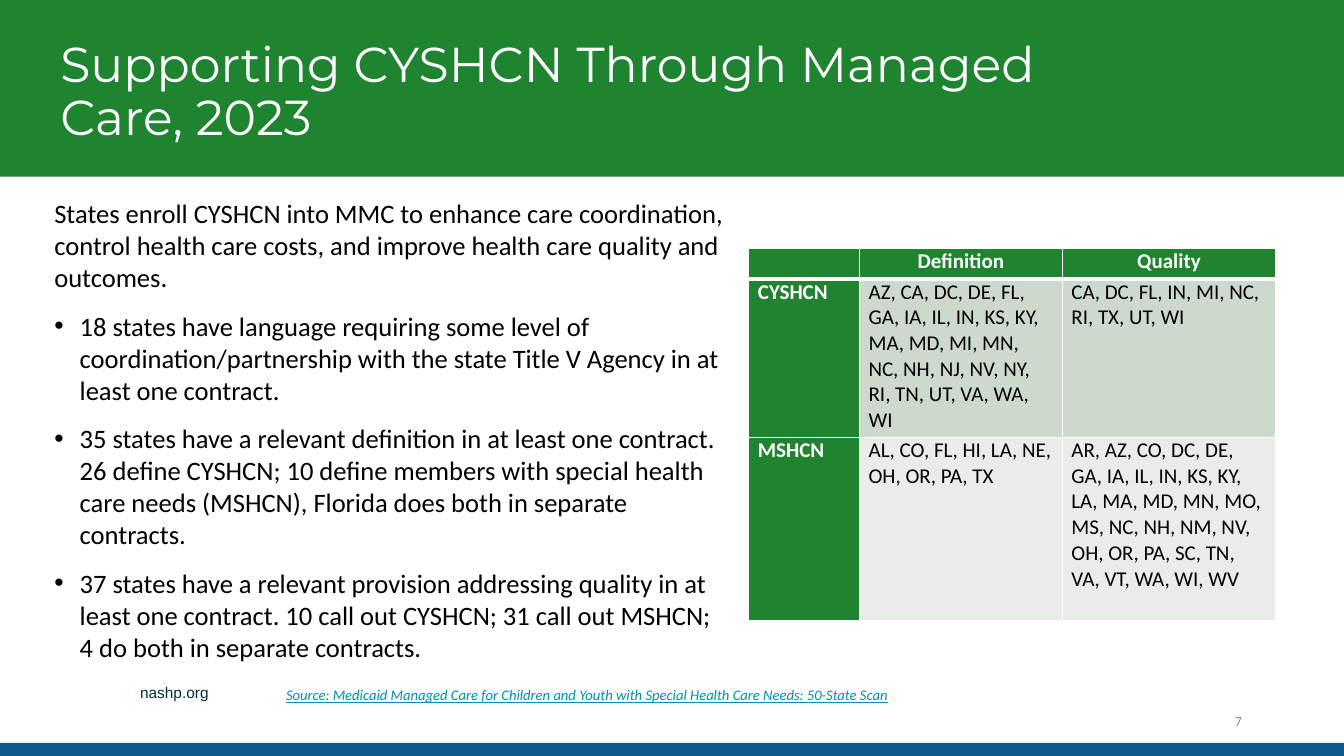
from lxml.etree import SubElement
from pptx import Presentation
from pptx.dml.color import RGBColor
from pptx.enum.shapes import MSO_SHAPE
from pptx.enum.text import MSO_ANCHOR, MSO_AUTO_SIZE, PP_ALIGN
from pptx.oxml.ns import qn
from pptx.util import Cm, Pt

COLORS = {
    "green": "1F842F", "head": "1F832F", "band1": "CDD9CD", "band2": "E8EDE8",
    "blue": "0A5A8C", "link": "008FB9", "navy": "002E3B", "gray": "8C8C8C",
    "black": "000000", "white": "FFFFFF",
}

# Content
TITLE = ["Supporting CYSHCN Through Managed", "Care, 2023"]
INTRO = ("States enroll CYSHCN into MMC to enhance care coordination, control "
         "health care costs, and improve health care quality and outcomes.")
BULLETS = [
    "18 states have language requiring some level of coordination/partnership "
    "with the state Title V Agency in at least one contract.",
    "35 states have a relevant definition in at least one contract. 26 define "
    "CYSHCN; 10 define members with special health care needs (MSHCN), Florida "
    "does both in separate contracts.",
    "37 states have a relevant provision addressing quality in at least one "
    "contract. 10 call out CYSHCN; 31 call out MSHCN; 4 do both in separate "
    "contracts.",
]
STATES = [
    ("", "Definition", "Quality"),
    ("CYSHCN",
     "AZ, CA, DC, DE, FL, GA, IA, IL, IN, KS, KY, MA, MD, MI, MN, NC, NH, NJ, "
     "NV, NY, RI, TN, UT, VA, WA, WI",
     "CA, DC, FL, IN, MI, NC, RI, TX, UT, WI"),
    ("MSHCN",
     "AL, CO, FL, HI, LA, NE, OH, OR, PA, TX",
     "AR, AZ, CO, DC, DE, GA, IA, IL, IN, KS, KY, LA, MA, MD, MN, MO, MS, NC, "
     "NH, NM, NV, OH, OR, PA, SC, TN, VA, VT, WA, WI, WV"),
]
SITE = "nashp.org"
SOURCE = ("Source: Medicaid Managed Care for Children and Youth with Special "
          "Health Care Needs: 50-State Scan")
PAGE = "7"

# Layout in centimetres
WIDTH, HEIGHT = 33.87, 19.05
BANDS = [("green", 0, 4.45), ("blue", 18.72, 0.33)]
COL_WIDTHS = [2.79, 5.11, 5.38]
ROW_HEIGHTS = [0.76, 3.99, 4.62]


def rgb(name):
    return RGBColor.from_string(COLORS[name])


def add_run(p, text, color, **font):
    r = p.add_run()
    r.text = text
    r.font.color.rgb = rgb(color)
    for key, value in {"name": "Calibri", **font}.items():
        setattr(r.font, key, value)


def add_box(s, left, top, width, height):
    tf = s.shapes.add_textbox(Cm(left), Cm(top), Cm(width), Cm(height)).text_frame
    tf.word_wrap = True
    return tf


def add_bullet(p):
    pPr = p._p.get_or_add_pPr()
    pPr.set("marL", str(Cm(0.64)))
    pPr.set("indent", str(-Cm(0.64)))
    clr = SubElement(pPr, qn("a:buClr"))
    SubElement(clr, qn("a:srgbClr"), val=COLORS["black"])
    SubElement(pPr, qn("a:buFont"), typeface="Arial")
    SubElement(pPr, qn("a:buChar"), char="•")


def set_borders(cell, widths):
    """Draw white borders, placed ahead of the cell's fill."""
    tcPr = cell._tc.get_or_add_tcPr()
    for i, (side, width) in enumerate(widths.items()):
        ln = SubElement(tcPr, qn(f"a:ln{side}"), w=str(Pt(width)))
        fill = SubElement(ln, qn("a:solidFill"))
        SubElement(fill, qn("a:srgbClr"), val=COLORS["white"])
        tcPr.insert(i, ln)


prs = Presentation()
prs.slide_width, prs.slide_height = Cm(WIDTH), Cm(HEIGHT)
s = prs.slides.add_slide(prs.slide_layouts[5])

# Top and bottom bands
for color, top, height in BANDS:
    sp = s.shapes.add_shape(MSO_SHAPE.RECTANGLE, 0, Cm(top), Cm(WIDTH), Cm(height))
    sp.shadow.inherit = False
    sp.fill.solid()
    sp.fill.fore_color.rgb = rgb(color)
    sp.line.fill.background()

# Title, brought in front of the green band
title = s.shapes.title
s.shapes._spTree.append(title._element)
title.left, title.top, title.width, title.height = Cm(1.52), Cm(0.56), Cm(30.84), Cm(3.25)
tf = title.text_frame
for key, value in {"word_wrap": True, "auto_size": MSO_AUTO_SIZE.NONE,
                   "vertical_anchor": MSO_ANCHOR.BOTTOM, "margin_left": 0}.items():
    setattr(tf, key, value)
p = tf.paragraphs[0]
p.alignment, p.line_spacing = PP_ALIGN.LEFT, 0.9
for i, line in enumerate(TITLE):
    if i:
        p.add_line_break()
    add_run(p, line, "white", name="Montserrat", size=Pt(35))

# Body text
tf = add_box(s, 1.12, 4.85, 17.5, 11.96)
for i, text in enumerate([INTRO] + BULLETS):
    p = tf.add_paragraph() if i else tf.paragraphs[0]
    if i:
        add_bullet(p)
        p.space_before = Pt(4)
    p.space_after = Pt(8)
    add_run(p, text, "black", size=Pt(19))

# Table of states
table = s.shapes.add_table(len(STATES), len(COL_WIDTHS), Cm(18.87), Cm(6.27),
                           Cm(sum(COL_WIDTHS)), Cm(sum(ROW_HEIGHTS))).table
for column, width in zip(table.columns, COL_WIDTHS):
    column.width = Cm(width)
for i, (row, height) in enumerate(zip(table.rows, ROW_HEIGHTS)):
    row.height = Cm(height)
    for j, cell in enumerate(row.cells):
        label = i == 0 or j == 0
        cell.margin_left = cell.margin_right = Cm(0.23)
        cell.margin_top = cell.margin_bottom = 0
        cell.fill.solid()
        cell.fill.fore_color.rgb = rgb("head" if label else f"band{i}")
        set_borders(cell, {"L": 1, "R": 1, "T": 3 if i == 1 else 1,
                           "B": 3 if i == 0 else 1})
        p = cell.text_frame.paragraphs[0]
        p.alignment = PP_ALIGN.CENTER if i == 0 else PP_ALIGN.LEFT
        add_run(p, STATES[i][j], "white" if label else "black",
                size=Pt(15), bold=label)

# Footer: site, source and page number
p = add_box(s, 3.28, 17.09, 3.6, 0.74).paragraphs[0]
add_run(p, SITE, "navy", name="Arial", size=Pt(11))

p = add_box(s, 6.96, 17.17, 21.49, 0.74).paragraphs[0]
add_run(p, SOURCE, "link", size=Pt(10.5), italic=True, underline=True)

tf = add_box(s, 23.93, 17.65, 7.62, 1.02)
tf.vertical_anchor = MSO_ANCHOR.MIDDLE
p = tf.paragraphs[0]
p.alignment, p.space_after = PP_ALIGN.RIGHT, Pt(6)
add_run(p, PAGE, "gray", size=Pt(10))

prs.save("out.pptx")
